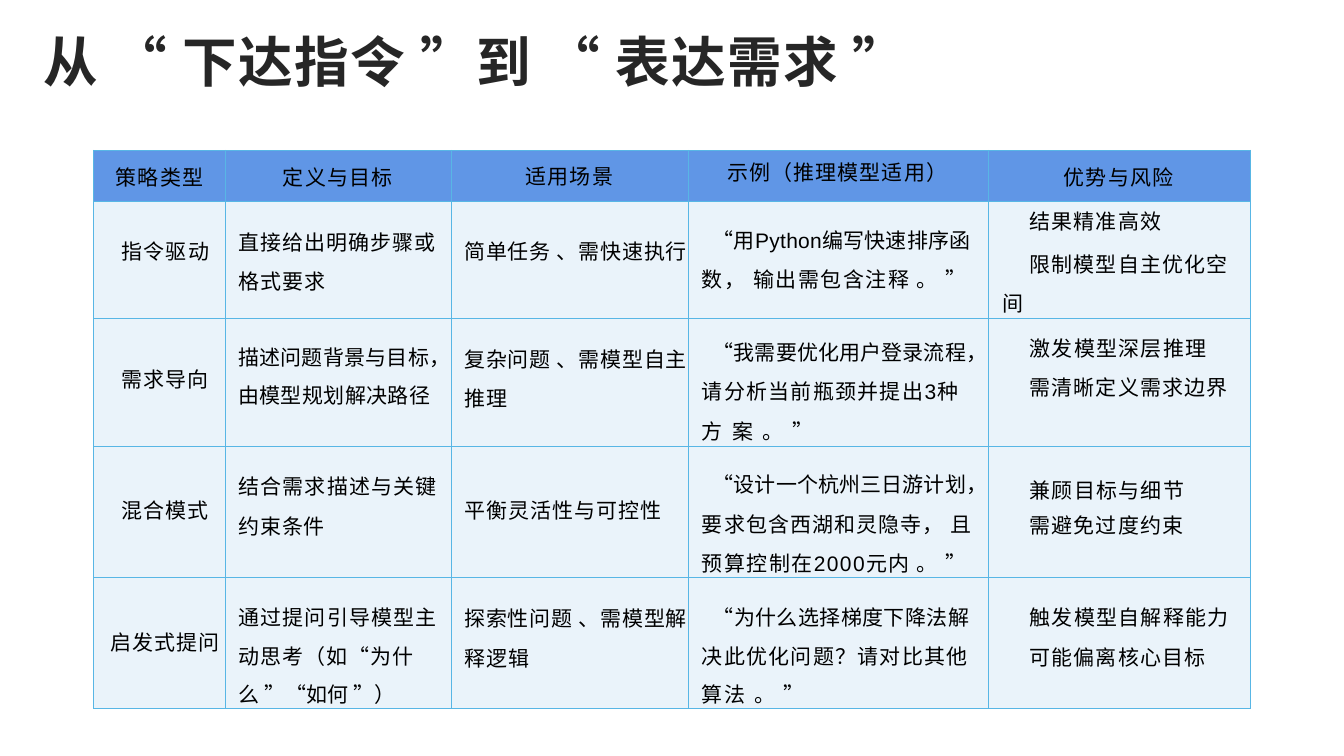
from itertools import groupby

from lxml.etree import SubElement
from pptx import Presentation
from pptx.dml.color import RGBColor
from pptx.enum.text import MSO_ANCHOR, MSO_AUTO_SIZE, PP_ALIGN
from pptx.oxml.ns import qn
from pptx.util import Cm, Pt

HEADER = [
    ("策略类型", 0.56, 0.26), ("定义与目标", 1.45, 0.26), ("适用场景", 1.88, 0.24),
    ("示例（推理模型适用）", 0.97, 0.14), ("优势与风险", 1.9, 0.26),
]

LEFTS = [0.71, 0.32, 0.33, 0.33, 0.36]
INDENTS = [0, 0, 0, 0.27, 0.68]
COLUMNS = [3.32, 5.69, 5.99, 7.55, 6.6]
ROWS = [1.29, 2.95, 3.23, 3.3, 3.3]
LINE_HEIGHT = 0.77

BODY = [
    [("指令驱动", 0.84, [0.8], 1),
     ("直接给出明确步骤或\v格式要求", 0.61, [0.8, 0.8], 1.29),
     ("简单任务 、需快速执行", 0.84, [0.6], 1),
     ("“用Python编写快速排序函\v数， 输出需包含注释 。 ”", 0.58, [0.2, 1.1], 1.27),
     ("结果精准高效\n限制模型自主优化空\v间", 0.1, [0.8, 0.8, 0], 1.29)],
    [("需求导向", 1.11, [0.6], 1),
     ("描述问题背景与目标，\v由模型规划解决路径", 0.58, [0.2, 0.3], 1.24),
     ("复杂问题 、需模型自主\v推理", 0.61, [0.6, 0.6], 1.29),
     ("“我需要优化用户登录流程，\v请分析当前瓶颈并提出3种\v方 案 。 ”", 0.43, [0.1, 0.9, 1.6], 1.31),
     ("激发模型深层推理\n需清晰定义需求边界", 0.33, [0.9, 0.8], 1.29)],
    [("混合模式", 1.18, [0.7], 1),
     ("结合需求描述与关键\v约束条件", 0.6, [0.9, 0.7], 1.3),
     ("平衡灵活性与可控性", 1.18, [0.8], 1),
     ("“设计一个杭州三日游计划，\v要求包含西湖和灵隐寺， 且\v预算控制在2000元内 。 ”", 0.55, [0.1, 0.8, 1], 1.29),
     ("兼顾目标与细节\n需避免过度约束", 0.7, [0.9, 0.8], 1.13)],
    [("启发式提问", 1.21, [0.8], 1),
     ("通过提问引导模型主\v动思考（如“为什\v么 ”“如何 ”）", 0.6, [0.9, 0.8, 0.1], 1.26),
     ("探索性问题 、需模型解\v释逻辑", 0.62, [0.6, 0.7], 1.3),
     ("“为什么选择梯度下降法解\v决此优化问题？请对比其他\v算法 。 ”", 0.6, [0.3, 0.9, 1.4], 1.26),
     ("触发模型自解释能力\n可能偏离核心目标", 0.6, [0.9, 0.8], 1.29)],
]


def color(value):
    return RGBColor.from_string(value)


class Deck:
    """Holds the style and the current slide, and adds its elements."""

    cjk, latin = "Noto Sans CJK SC", "Arial"
    ink, title_ink = "000000", "262626"
    header_fill, body_fill, border = "6096E6", "EAF3FA", "58B6E5"

    def __init__(self, prs):
        self.s = prs.slides.add_slide(prs.slide_layouts[5])

    def style(self, r, size, ink, spacing, bold=False, latin=None):
        r.font.size, r.font.bold = Pt(size), bold
        r.font.color.rgb = color(ink)
        r.font.name = latin or self.cjk
        rPr = r.font._element
        rPr.set("spc", str(round(spacing * 100)))
        SubElement(rPr, qn("a:ea")).set("typeface", self.cjk)

    def title(self, text, left, top, width, height):
        sp = self.s.shapes.title
        sp.left, sp.top, sp.width, sp.height = map(Cm, (left, top, width, height))
        tf = sp.text_frame
        tf.text = text
        tf.word_wrap, tf.auto_size = True, MSO_AUTO_SIZE.NONE
        tf.vertical_anchor = MSO_ANCHOR.MIDDLE
        tf.margin_left = tf.margin_right = tf.margin_top = tf.margin_bottom = 0
        p = tf.paragraphs[0]
        p.alignment, p.line_spacing = PP_ALIGN.LEFT, 0.87
        self.style(p.runs[0], 39, self.title_ink, 1, bold=True)

    def line(self, p, text, spacing):
        for is_latin, chars in groupby(text, lambda c: c.isascii() and c.isalnum()):
            r = p.add_run()
            r.text = "".join(chars)
            self.style(r, 15, self.ink, spacing, latin=self.latin if is_latin else None)

    def cell(self, cell, fill, text, left, top, spacings, leading=1, indent=0):
        paragraphs = text.split("\n")
        if "\v" in paragraphs[0]:
            top -= LINE_HEIGHT * (leading - 1)
        cell.margin_left, cell.margin_top = Cm(left), Cm(top)
        cell.margin_right = cell.margin_bottom = 0
        tcPr = cell._tc.get_or_add_tcPr()
        for side in ("lnL", "lnR", "lnT", "lnB"):
            ln = SubElement(tcPr, qn(f"a:{side}"), w=str(Pt(1)))
            SubElement(SubElement(ln, qn("a:solidFill")), qn("a:srgbClr")).set("val", self.border)
        cell.fill.solid()
        cell.fill.fore_color.rgb = color(fill)
        tf, spacing = cell.text_frame, iter(spacings)
        for i, paragraph in enumerate(paragraphs):
            p = tf.add_paragraph() if i else tf.paragraphs[0]
            p.line_spacing = leading if i or "\v" in paragraph else 1
            p.space_before = Pt(2.5 if i and "\v" in paragraph else 0)
            p._p.get_or_add_pPr().set("indent", str(Cm(indent)))
            for j, part in enumerate(paragraph.split("\v")):
                if j:
                    p.add_line_break()
                self.line(p, part, next(spacing))

    def table(self, left, top):
        frame = self.s.shapes.add_table(len(ROWS), len(COLUMNS), Cm(left), Cm(top),
                                        Cm(sum(COLUMNS)), Cm(sum(ROWS)))
        table = frame.table
        table.horz_banding = False
        for column, width in zip(table.columns, COLUMNS):
            column.width = Cm(width)
        for row, height in zip(table.rows, ROWS):
            row.height = Cm(height)
        for c, (text, inset, drop) in enumerate(HEADER):
            self.cell(table.cell(0, c), self.header_fill, text, inset, drop, [0.8])
        for i, row in enumerate(BODY, 1):
            for c, (text, drop, spacings, leading) in enumerate(row):
                inset = 0.42 if text == "启发式提问" else LEFTS[c]
                self.cell(table.cell(i, c), self.body_fill, text, inset, drop,
                          spacings, leading, INDENTS[c])


def main():
    prs = Presentation()
    prs.slide_width, prs.slide_height = Cm(33.87), Cm(19.05)
    deck = Deck(prs)
    deck.title("从 “ 下达指令 ”到 “ 表达需求 ”", 1.09, 0.91, 23.5, 1.5)
    deck.table(2.36, 3.79)
    prs.save("out.pptx")


if __name__ == "__main__":
    main()
